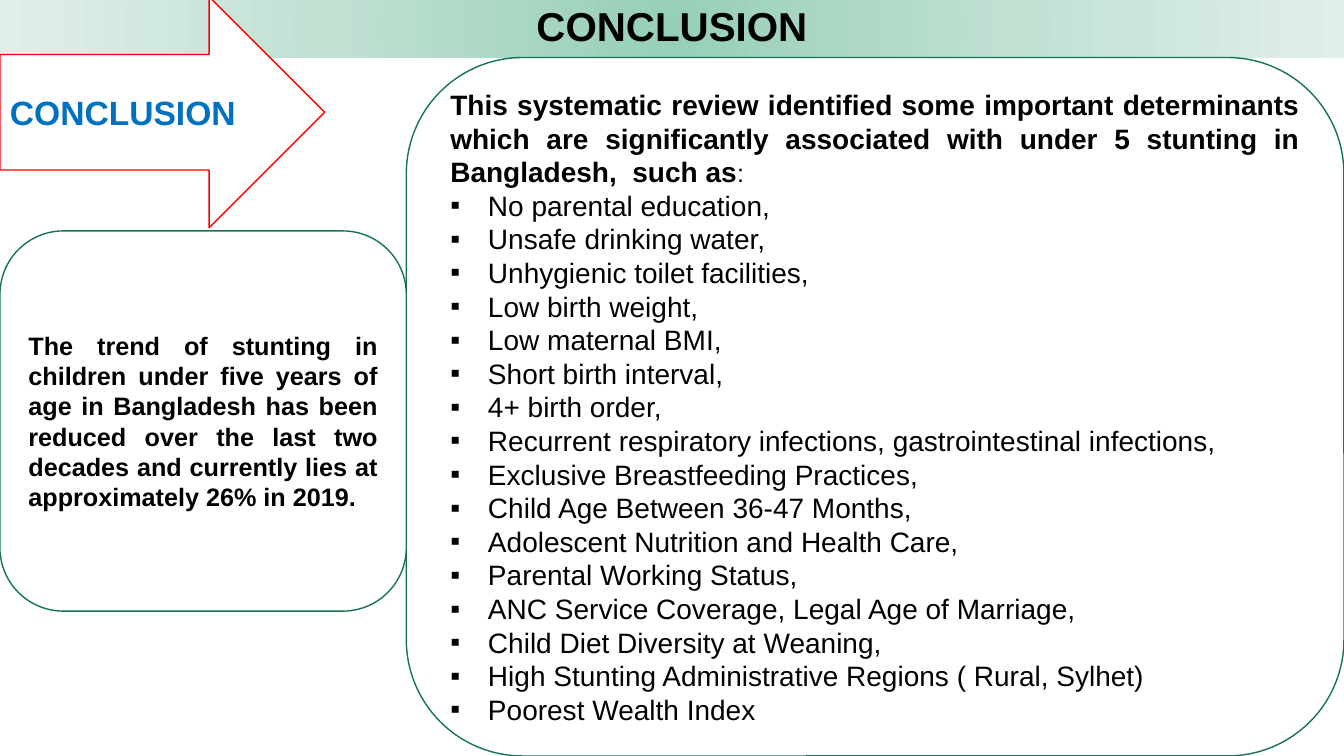
"""Build the conclusion slide of a review of child stunting in Bangladesh."""
from lxml.etree import SubElement
from pptx import Presentation
from pptx.dml.color import RGBColor
from pptx.enum.shapes import MSO_SHAPE as Shape
from pptx.enum.text import MSO_ANCHOR as Anchor, MSO_AUTO_SIZE as AutoSize, PP_ALIGN as Align
from pptx.oxml.ns import qn
from pptx.util import Cm, Pt

BLACK = RGBColor(0x00, 0x00, 0x00)
WHITE = RGBColor(0xFF, 0xFF, 0xFF)
GREEN = RGBColor(0x15, 0x72, 0x59)
RED = RGBColor(0xFF, 0x00, 0x00)
BLUE = RGBColor(0x00, 0x70, 0xC0)
BANNER_STOPS = (
    (0, RGBColor(0x96, 0xCF, 0xB7)),
    (50, RGBColor(0xC0, 0xE0, 0xD2)),
    (100, RGBColor(0xE0, 0xEF, 0xE9)),
)

WIDTH, HEIGHT = Cm(33.87), Cm(19.05)
BANNER_HEIGHT = Cm(1.45)
SPLIT = Cm(10.24)
ARROW_TOP, ARROW_WIDTH, ARROW_HEIGHT = Cm(-0.08), Cm(8.18), Cm(5.82)
TREND_TOP, TREND_HEIGHT = Cm(5.82), Cm(9.58)
BULLET_INDENT = Cm(0.95)

TREND = (
    "The trend of stunting in children under five years of age in Bangladesh has been "
    "reduced over the last two decades and currently lies at approximately 26% in 2019."
)
FINDING = (
    "This systematic review identified some important determinants which are "
    "significantly associated with under 5 stunting in Bangladesh,  such as"
)
DETERMINANTS = (
    "No parental education,",
    "Unsafe drinking water,",
    "Unhygienic toilet facilities,",
    "Low birth weight,",
    "Low maternal BMI,",
    "Short birth interval,",
    "4+ birth order,",
    "Recurrent respiratory infections, gastrointestinal infections,",
    "Exclusive Breastfeeding Practices,",
    "Child Age Between 36-47 Months,",
    "Adolescent Nutrition and Health Care,",
    "Parental Working Status,",
    "ANC Service Coverage, Legal Age of Marriage,",
    "Child Diet Diversity at Weaning,",
    "High Stunting Administrative Regions ( Rural, Sylhet)",
    "Poorest Wealth Index",
)


def write(para, text, size=20, color=BLACK, bold=False, align=Align.JUSTIFY):
    span = para.add_run()
    span.text = text
    span.font.name = "Arial"
    span.font.size = Pt(size)
    span.font.bold = bold
    span.font.color.rgb = color
    para.alignment = align


def add_bullet(para):
    properties = para._p.get_or_add_pPr()
    properties.set("marL", str(BULLET_INDENT))
    properties.set("indent", str(-BULLET_INDENT))
    SubElement(properties, qn("a:buFont"), typeface="Arial")
    SubElement(properties, qn("a:buChar"), char="▪")


def fill_radial(shape, stops):
    shape.fill.gradient()
    gradient = shape._element.spPr.find(qn("a:gradFill"))
    gradient.clear()
    stop_list = SubElement(gradient, qn("a:gsLst"))
    for percent, color in stops:
        stop = SubElement(stop_list, qn("a:gs"), pos=str(percent * 1000))
        SubElement(stop, qn("a:srgbClr"), val=str(color))
    circle = SubElement(gradient, qn("a:path"), path="circle")
    SubElement(circle, qn("a:fillToRect"), l="50000", t="50000", r="50000", b="50000")


def format_title(title, text):
    title.left, title.top, title.width, title.height = 0, 0, WIDTH, BANNER_HEIGHT
    fill_radial(title, BANNER_STOPS)
    frame = title.text_frame
    frame.auto_size = AutoSize.NONE
    frame.vertical_anchor = Anchor.MIDDLE
    para = frame.paragraphs[0]
    para.line_spacing = 0.9
    write(para, text, size=28.8, bold=True, align=Align.CENTER)


def add_panel(page, kind, left, top, width, height, outline=GREEN):
    panel = page.shapes.add_shape(kind, left, top, width, height)
    panel.shadow.inherit = False
    panel.fill.solid()
    panel.fill.fore_color.rgb = WHITE
    panel.line.color.rgb = outline
    panel.line.width = Pt(1)
    frame = panel.text_frame
    frame.word_wrap = True
    frame.vertical_anchor = Anchor.MIDDLE
    return frame


def main():
    deck = Presentation()
    deck.slide_width, deck.slide_height = WIDTH, HEIGHT
    page = deck.slides.add_slide(deck.slide_layouts.get_by_name("Title Only"))
    format_title(page.shapes.title, "CONCLUSION")

    findings = add_panel(page, Shape.ROUNDED_RECTANGLE, SPLIT, BANNER_HEIGHT,
                         WIDTH - SPLIT, HEIGHT - BANNER_HEIGHT)
    write(findings.paragraphs[0], FINDING, bold=True)
    write(findings.paragraphs[0], ":", size=18)
    for determinant in DETERMINANTS:
        para = findings.add_paragraph()
        write(para, determinant)
        add_bullet(para)

    arrow = add_panel(page, Shape.RIGHT_ARROW, 0, ARROW_TOP, ARROW_WIDTH, ARROW_HEIGHT,
                      outline=RED)
    write(arrow.paragraphs[0], "CONCLUSION", size=24, color=BLUE, bold=True)

    trend = add_panel(page, Shape.ROUNDED_RECTANGLE, 0, TREND_TOP, SPLIT, TREND_HEIGHT)
    write(trend.paragraphs[0], TREND, size=18, bold=True)

    deck.save("out.pptx")


if __name__ == "__main__":
    main()
